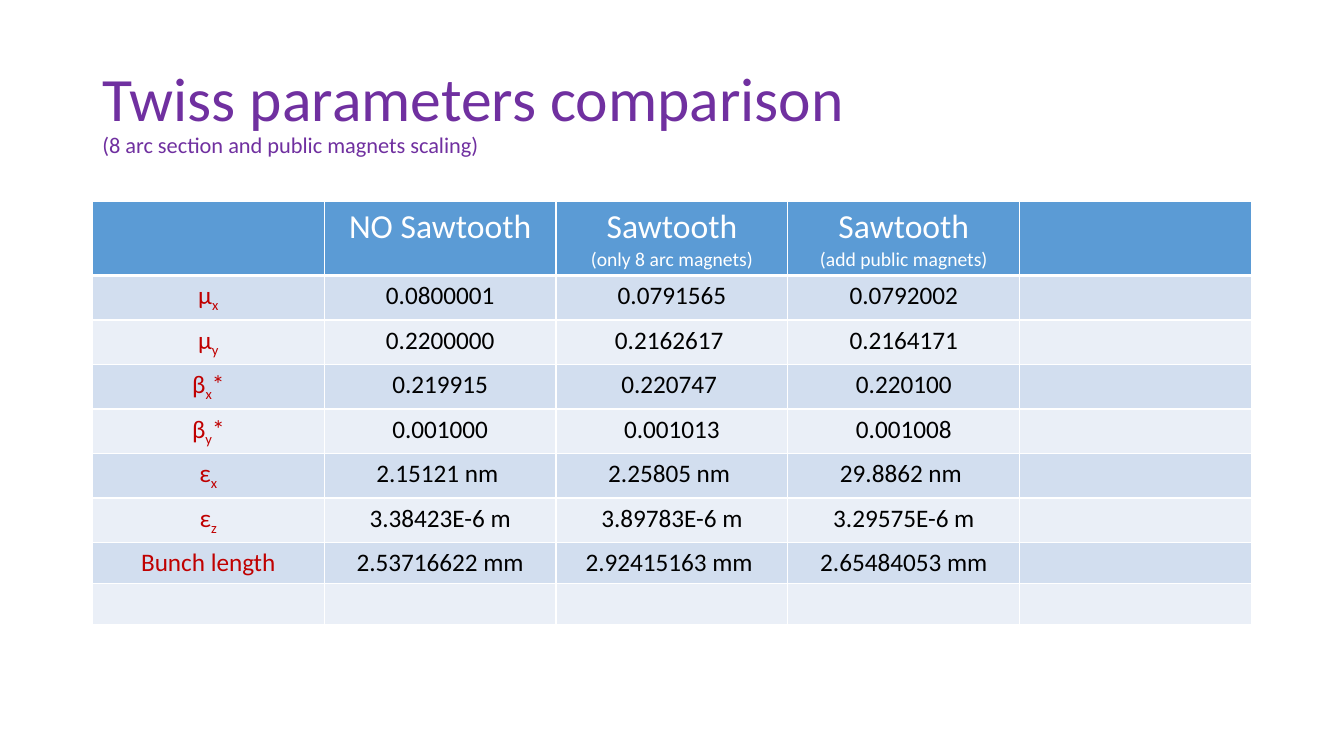
from dataclasses import dataclass

from lxml import etree
from pptx import Presentation
from pptx.dml.color import RGBColor
from pptx.enum.text import MSO_ANCHOR, PP_ALIGN
from pptx.oxml.ns import qn
from pptx.util import Pt

CENTER = PP_ALIGN.CENTER
LEFT = PP_ALIGN.LEFT
MIDDLE = MSO_ANCHOR.MIDDLE

FONT = "Calibri"
COLORS = {
    "title": "7030A0",
    "header": "5B9BD5",
    "band_dark": "D2DEEF",
    "band_light": "EAEFF7",
    "label": "C00000",
    "value": "000000",
    "white": "FFFFFF",
}
TABLE_LEFT, TABLE_TOP = 66, 144
COLUMN_WIDTH, ROW_HEIGHT = 165.6, 29.2
COLUMN_COUNT = 5


@dataclass(frozen=True)
class Heading:
    name: str = ""
    detail: str = ""


@dataclass(frozen=True)
class Parameter:
    symbol: str = ""
    subscript: str = ""
    suffix: str = ""
    values: tuple[str, ...] = ()


HEADINGS = [
    Heading(),
    Heading("NO Sawtooth"),
    Heading("Sawtooth", "(only 8 arc magnets)"),
    Heading("Sawtooth", "(add public magnets)"),
    Heading(),
]
PARAMETERS = [
    Parameter("μ", "x", "", ("0.0800001", "0.0791565", "0.0792002")),
    Parameter("μ", "y", "", ("0.2200000", "0.2162617 ", "0.2164171")),
    Parameter("β", "x", "*", ("0.219915", "0.220747 ", "0.220100")),
    Parameter("β", "y", "*", ("0.001000", " 0.001013 ", "0.001008")),
    Parameter("ε", "x", "", ("2.15121 nm ", "2.25805 nm ", "29.8862 nm ")),
    Parameter("ε", "z", "", ("3.38423E-6 m", "3.89783E-6 m", "3.29575E-6 m")),
    Parameter("Bunch length", "", "",
              ("2.53716622 mm", "2.92415163 mm ", "2.65484053 mm")),
    Parameter(),
]


def add_span(para, text: str, size: float, color: str, baseline: int = 0) -> None:
    """Add one run; empty text adds nothing."""
    if not text:
        return
    span = para.add_run()
    span.text = text
    span.font.name = FONT
    span.font.size = Pt(size)
    span.font.color.rgb = RGBColor.from_string(COLORS[color])
    if baseline:
        span.font._element.set("baseline", str(baseline * 1000))


def style_cell(cell, fill: str, bottom_width: float = 1) -> None:
    """Give a cell white borders, then its fill."""
    properties = cell._tc.get_or_add_tcPr()
    for side, width in (("L", 1), ("R", 1), ("T", 1), ("B", bottom_width)):
        line = etree.SubElement(properties, qn(f"a:ln{side}"), w=str(Pt(width)))
        solid = etree.SubElement(line, qn("a:solidFill"))
        etree.SubElement(solid, qn("a:srgbClr"), val=COLORS["white"])
    cell.fill.solid()
    cell.fill.fore_color.rgb = RGBColor.from_string(COLORS[fill])


def add_title(page) -> None:
    box = page.shapes.add_textbox(Pt(66), Pt(28.8), Pt(828), Pt(104.4))
    frame = box.text_frame
    frame.word_wrap = True
    frame.vertical_anchor = MIDDLE
    para = frame.paragraphs[0]
    para.alignment = LEFT
    para.line_spacing = 0.9
    add_span(para, "Twiss parameters comparison", 44, "title")
    para.add_line_break()
    add_span(para, "(8 arc section and public magnets scaling)", 16, "title")


def fill_heading(cell, heading: Heading) -> None:
    style_cell(cell, "header", bottom_width=3)
    para = cell.text_frame.paragraphs[0]
    para.alignment = CENTER
    add_span(para, heading.name, 24, "white")
    if heading.detail:
        para = cell.text_frame.add_paragraph()
        para.alignment = CENTER
        add_span(para, heading.detail, 14, "white")


def fill_parameter(cells: list, parameter: Parameter, band: str) -> None:
    for cell in cells:
        style_cell(cell, band)
        cell.text_frame.paragraphs[0].alignment = CENTER
    label = cells[0].text_frame.paragraphs[0]
    add_span(label, parameter.symbol, 18, "label")
    add_span(label, parameter.subscript, 18, "label", baseline=-25)
    add_span(label, parameter.suffix, 18, "label")
    for cell, value in zip(cells[1:], parameter.values):
        add_span(cell.text_frame.paragraphs[0], value, 18, "value")


def add_comparison(page) -> None:
    row_count = len(PARAMETERS) + 1
    table = page.shapes.add_table(
        row_count, COLUMN_COUNT, Pt(TABLE_LEFT), Pt(TABLE_TOP),
        Pt(COLUMN_WIDTH * COLUMN_COUNT), Pt(ROW_HEIGHT * row_count)).table
    table.first_row = False
    table.horz_banding = False
    for column in table.columns:
        column.width = Pt(COLUMN_WIDTH)
    for row in table.rows:
        row.height = Pt(ROW_HEIGHT)

    # Header row
    for column_index, heading in enumerate(HEADINGS):
        fill_heading(table.cell(0, column_index), heading)

    # Parameter rows in alternating bands
    for row_index, parameter in enumerate(PARAMETERS, start=1):
        band = "band_dark" if row_index % 2 else "band_light"
        fill_parameter(list(table.rows[row_index].cells), parameter, band)


def main() -> None:
    deck = Presentation()
    deck.slide_width, deck.slide_height = Pt(960), Pt(540)
    page = deck.slides.add_slide(deck.slide_layouts[6])
    add_title(page)
    add_comparison(page)
    deck.save("out.pptx")


if __name__ == "__main__":
    main()
